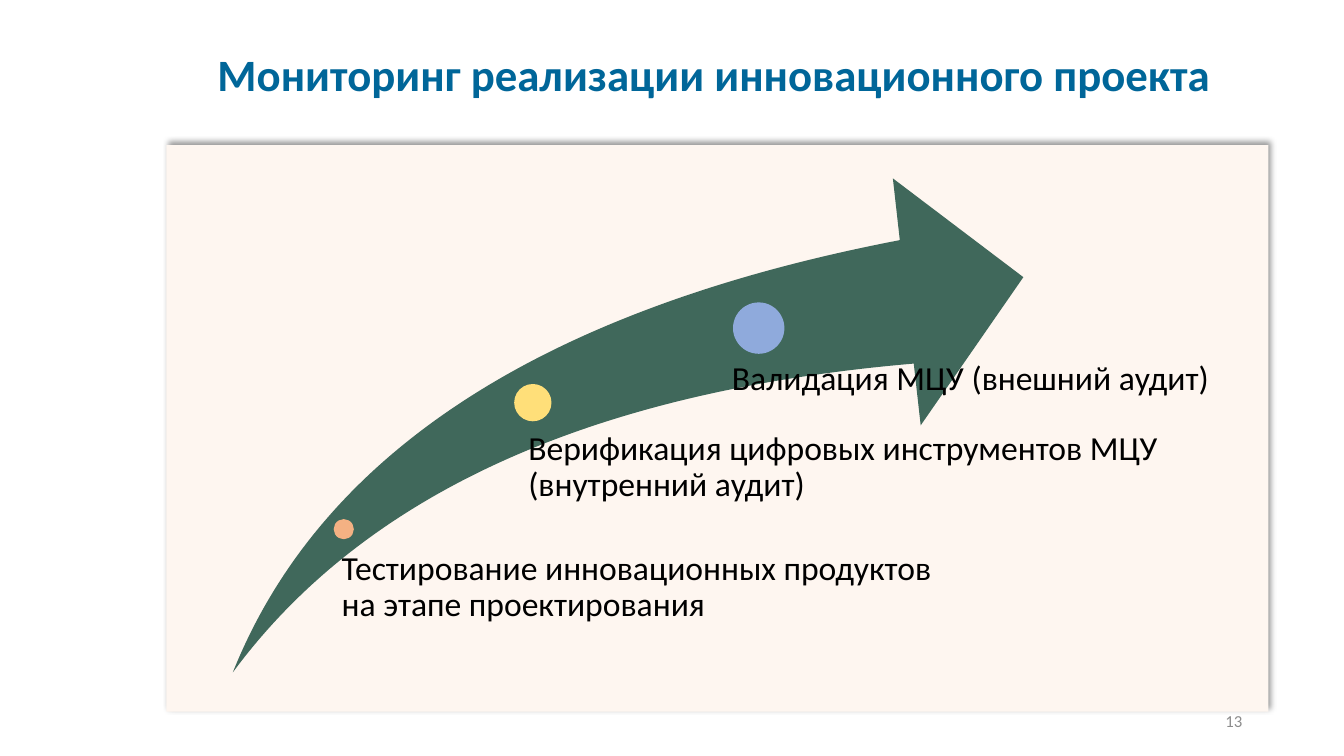
from dataclasses import dataclass

from lxml import etree
from pptx import Presentation
from pptx.dml.color import RGBColor
from pptx.enum.shapes import MSO_SHAPE
from pptx.enum.text import MSO_ANCHOR, MSO_AUTO_SIZE, PP_ALIGN
from pptx.oxml.ns import qn
from pptx.util import Inches, Pt

RECTANGLE = MSO_SHAPE.RECTANGLE
OVAL = MSO_SHAPE.OVAL
SWOOSH = MSO_SHAPE.SWOOSH_ARROW
MIDDLE, TOP = MSO_ANCHOR.MIDDLE, MSO_ANCHOR.TOP
LEFT, CENTER, RIGHT = PP_ALIGN.LEFT, PP_ALIGN.CENTER, PP_ALIGN.RIGHT
NO_AUTOFIT = MSO_AUTO_SIZE.NONE


@dataclass(frozen=True)
class Theme:
    font: str = "Calibri"
    title_color: str = "006699"
    text_color: str = "000000"
    number_color: str = "8C8C8C"
    panel_color: str = "FEF6F0"
    arrow_color: str = "40685B"
    shadow_color: str = "000000"
    title_size: int = 32
    stage_size: int = 24
    number_size: int = 12
    line_spacing: float = 0.9


@dataclass(frozen=True)
class Area:
    left: float
    top: float
    width: float
    height: float

    def lengths(self) -> tuple:
        return tuple(Inches(n) for n in (self.left, self.top, self.width, self.height))


@dataclass(frozen=True)
class Stage:
    text: str
    color: str
    dot: Area
    label: Area
    inset: float


THEME = Theme()
STAGES = (
    Stage("Тестирование инновационных продуктов на этапе проектирования", "F4B183",
          Area(3.31, 5.15, 0.2, 0.2), Area(3.28, 5.47, 6.26, 0.94), 0.11),
    Stage("Верификация цифровых инструментов МЦУ (внутренний аудит)", "FFDF79",
          Area(5.1, 3.81, 0.37, 0.37), Area(5.04, 4.28, 7.36, 1.62), 0.2),
    Stage("Валидация МЦУ (внешний аудит)", "8FAADC",
          Area(7.27, 3, 0.51, 0.51), Area(6.99, 3.59, 5.67, 2.14), 0.27),
)


def add_figure(page, kind, area: Area, color: str):
    figure = page.shapes.add_shape(kind, *area.lengths())
    figure.shadow.inherit = False
    figure.fill.solid()
    figure.fill.fore_color.rgb = RGBColor.from_string(color)
    figure.line.fill.background()
    return figure


def add_shadow(figure, color: str) -> None:
    effects = figure._element.spPr.find(qn("a:effectLst"))
    shadow = etree.SubElement(effects, qn("a:outerShdw"), blurRad=str(Pt(4)),
                              dist=str(Pt(3)), dir=str(315 * 60000),
                              algn="bl", rotWithShape="0")
    tint = etree.SubElement(shadow, qn("a:srgbClr"), val=color)
    etree.SubElement(tint, qn("a:alpha"), val="40000")


def write_text(box, text: str, size: int, color: str, align, anchor,
               bold: bool = False, spacing: float = 1.0) -> None:
    frame = box.text_frame
    frame.word_wrap = True
    frame.auto_size = NO_AUTOFIT
    frame.vertical_anchor = anchor
    para = frame.paragraphs[0]
    para.alignment = align
    para.line_spacing = spacing
    span = para.add_run()
    span.text = text
    span.font.name = THEME.font
    span.font.size = Pt(size)
    span.font.bold = bold
    span.font.color.rgb = RGBColor.from_string(color)


def add_title(page, text: str, area: Area) -> None:
    title = page.shapes.title
    title.left, title.top, title.width, title.height = area.lengths()
    write_text(title, text, THEME.title_size, THEME.title_color, CENTER, MIDDLE,
               bold=True, spacing=THEME.line_spacing)


def add_stage(page, stage: Stage) -> None:
    add_figure(page, OVAL, stage.dot, stage.color)
    label = page.shapes.add_textbox(*stage.label.lengths())
    frame = label.text_frame
    frame.margin_left = Inches(stage.inset)
    frame.margin_top = frame.margin_right = frame.margin_bottom = Inches(0)
    write_text(label, stage.text, THEME.stage_size, THEME.text_color, LEFT, TOP,
               spacing=THEME.line_spacing)


def main() -> None:
    deck = Presentation()
    deck.slide_width, deck.slide_height = Inches(13.33), Inches(7.5)
    page = deck.slides.add_slide(deck.slide_layouts.get_by_name("Title Only"))

    add_title(page, "Мониторинг реализации инновационного проекта",
              Area(1.62, 0.4, 10.93, 0.72))
    panel = add_figure(page, RECTANGLE, Area(1.65, 1.44, 10.93, 5.62), THEME.panel_color)
    add_shadow(panel, THEME.shadow_color)
    number = page.shapes.add_textbox(*Area(9.42, 6.95, 3, 0.4).lengths())
    write_text(number, "13", THEME.number_size, THEME.number_color, RIGHT, MIDDLE)

    arrow = add_figure(page, SWOOSH, Area(2.31, 1.77, 7.84, 4.9), THEME.arrow_color)
    arrow.adjustments[0] = 0.25
    arrow.adjustments[1] = 0.25
    for stage in STAGES:
        add_stage(page, stage)

    deck.save("out.pptx")


if __name__ == "__main__":
    main()
